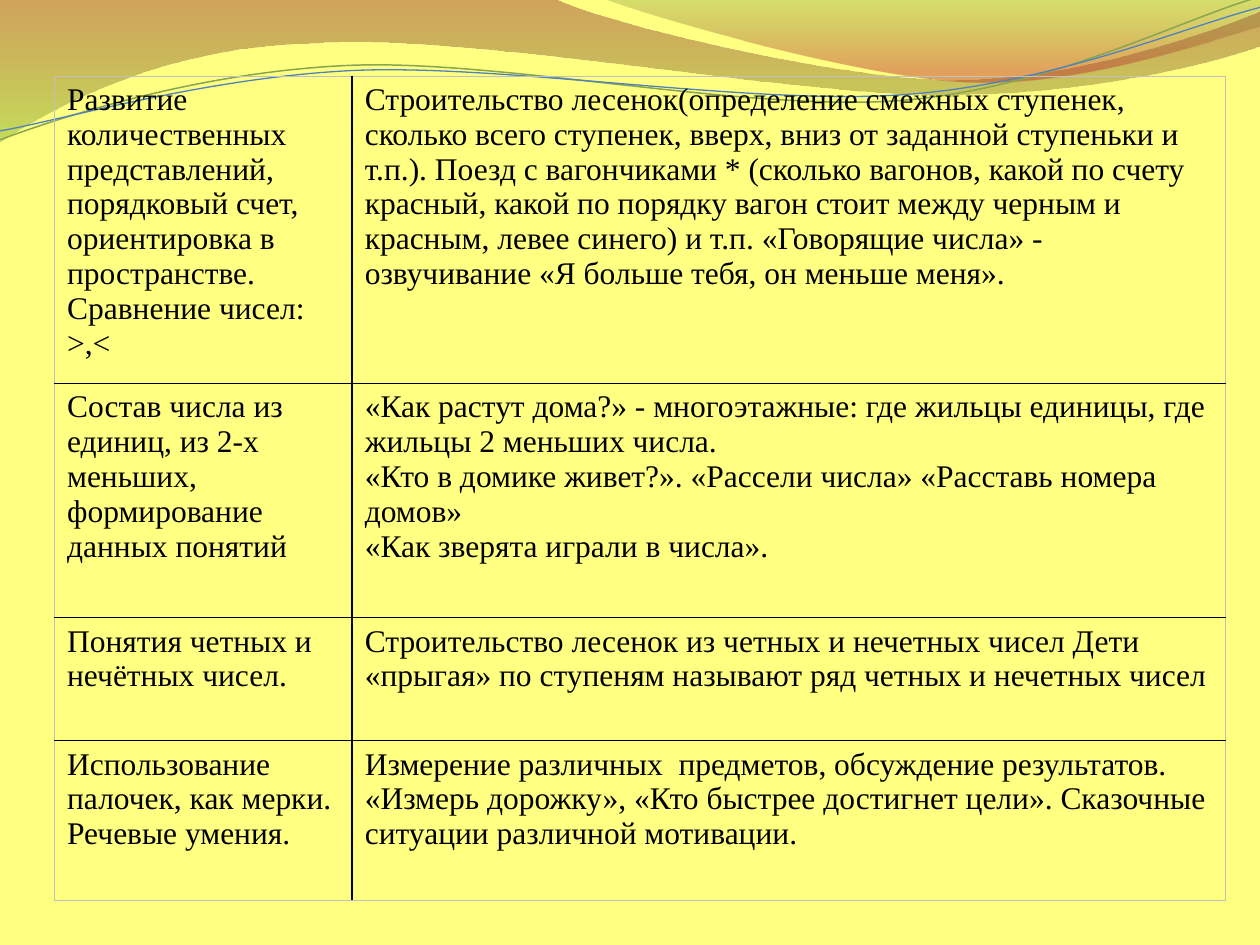
"""Build a slide with a table of number games under a wavy banner."""
import math
from dataclasses import dataclass

from lxml import etree
from pptx import Presentation
from pptx import util as u
from pptx.dml.color import RGBColor
from pptx.oxml import ns


@dataclass(frozen=True)
class Theme:
    """Colours, type and line sizes of the slide."""
    background: str = "FFFF82"
    ink: str = "000000"
    frame: str = "C0C0C0"
    brown: str = "973330"
    lime: str = "95C238"
    olive: str = "769537"
    red: str = "BE3330"
    green: str = "89A54F"
    blue: str = "4F81BD"
    font: str = "Times New Roman"
    size: float = 18
    rule: float = 1
    hairline: float = 0.5


THEME = Theme()
WAVE_ROTATION = -2.7

BAND_BOX = (-0.03, -0.03, 25.46, 2.9)
BAND = [(0, 0), (11.18, -0.03),
        (12.09, 0.43, 16.87, 1.6, 19.25, 1.6),
        (21.67, 1.6, 24.33, 0.66, 25.4, 0.23),
        (25.43, 0.91),
        (24.97, 1.12, 22.1, 1.93, 18.95, 1.91),
        (15.8, 1.91, 9.7, 0.71, 6.53, 0.86),
        (3.28, 0.91, 1.17, 2.11, -0.03, 2.87), (0, 0)]
CREST_BOX = (12.17, -0.03, 13.23, 1.78)
CREST = [(12.17, -0.03),
         (12.93, 0.28, 17.32, 1.57, 19.53, 1.65),
         (21.74, 1.75, 24.41, 0.81, 25.4, 0.53),
         (25.4, 0), (12.17, -0.03)]
GREEN_BOX = (-0.05, 0.56, 25.45, 1.8)
GREEN_WAVE = [(0, 2.82),
              (1.22, 2.36, 4.01, 1.45, 7.04, 1.32),
              (10.03, 1.19, 15.06, 2.26, 18.11, 2.03),
              (21.16, 1.8, 23.83, 0.38, 25.35, -0.05)]
BLUE_BOX = (-0.05, 0.76, 25.48, 1.47)
BLUE_WAVE = [(0, 2.64),
             (1.19, 2.44, 4.17, 1.55, 7.19, 1.42),
             (10.24, 1.3, 15.16, 2.13, 18.21, 1.91),
             (21.23, 1.7, 23.9, 0.53, 25.4, 0.15)]

COLUMN_WIDTHS = [6, 17.6]
ROW_HEIGHTS = [6.2, 4.72, 2.48, 3.22]
ROWS = [
    ("Развитие количественных представлений, порядковый счет, ориентировка в "
     "пространстве. Сравнение чисел: >,<",
     "Строительство лесенок(определение смежных ступенек, сколько всего ступенек, "
     "вверх, вниз от заданной ступеньки и т.п.). Поезд с вагончиками * (сколько "
     "вагонов, какой по счету красный, какой по порядку вагон стоит между черным и "
     "красным, левее синего) и т.п. «Говорящие числа» - озвучивание «Я больше тебя, "
     "он меньше меня»."),
    ("Состав числа из единиц, из 2-х меньших, формирование данных понятий",
     "«Как растут дома?» - многоэтажные: где жильцы единицы, где жильцы 2 меньших "
     "числа.\n«Кто в домике живет?». «Рассели числа» «Расставь номера домов»\n"
     "«Как зверята играли в числа»."),
    ("Понятия четных и нечётных чисел.",
     "Строительство лесенок из четных и нечетных чисел Дети «прыгая» по ступеням "
     "называют ряд четных и нечетных чисел"),
    ("Использование палочек, как мерки. Речевые умения.",
     "Измерение различных  предметов, обсуждение результатов.\n«Измерь дорожку», "
     "«Кто быстрее достигнет цели». Сказочные ситуации различной мотивации."),
]


def color(value):
    """Return the colour object for a hex value."""
    return RGBColor.from_string(value)


def to_local(x, y, box, rotation):
    """Return a slide point as a point inside a rotated box."""
    left, top, width, height = box
    angle = math.radians(-rotation)
    dx, dy = x - left - width / 2, y - top - height / 2
    return (u.Cm(width / 2 + dx * math.cos(angle) - dy * math.sin(angle)),
            u.Cm(height / 2 + dx * math.sin(angle) + dy * math.cos(angle)))


def add_outline(slide, box, outline, rotation=0, close=False):
    """Add a freeform of straight and cubic segments without a shadow."""
    left, top, width, height = box
    right, bottom = left + width, top + height
    builder = slide.shapes.build_freeform(u.Cm(left), u.Cm(top))
    builder.add_line_segments([(u.Cm(x), u.Cm(y)) for x, y in
                               ((right, top), (right, bottom), (left, bottom))], close=False)
    shape = builder.convert_to_shape()
    shape.shadow.inherit = False
    shape.rotation = rotation
    contour = next(shape.element.iter(ns.qn("a:path")))
    for child in list(contour):
        contour.remove(child)
    for index, segment in enumerate(outline):
        tag = "cubicBezTo" if len(segment) == 6 else "lnTo" if index else "moveTo"
        command = etree.SubElement(contour, ns.qn(f"a:{tag}"))
        for x, y in zip(segment[::2], segment[1::2]):
            local_x, local_y = to_local(x, y, box, rotation)
            etree.SubElement(command, ns.qn("a:pt"), x=str(int(local_x)), y=str(int(local_y)))
    if close:
        etree.SubElement(contour, ns.qn("a:close"))
    return shape


def add_gradient_area(slide, box, outline, stops):
    """Add a closed area with a translucent gradient from top to bottom."""
    shape = add_outline(slide, box, outline, close=True)
    shape.line.fill.background()
    shape.fill.gradient()
    shape.fill.gradient_angle = 270
    for stop, (position, value, _) in zip(shape.fill.gradient_stops, stops):
        stop.position = position
        stop.color.rgb = color(value)
    for element, (_, _, opacity) in zip(shape.element.iter(ns.qn("a:srgbClr")), stops):
        etree.SubElement(element, ns.qn("a:alpha"), val=str(opacity * 1000))


def add_wave(slide, box, outline, value, width):
    """Add an open curved line."""
    shape = add_outline(slide, box, outline, WAVE_ROTATION)
    shape.fill.background()
    shape.line.color.rgb = color(value)
    shape.line.width = u.Pt(width)


def set_border(cell, side, value, width):
    """Draw one border of a cell."""
    properties = cell._tc.get_or_add_tcPr()
    line = etree.SubElement(properties, ns.qn(f"a:ln{side}"), w=str(int(u.Pt(width))))
    fill = etree.SubElement(line, ns.qn("a:solidFill"))
    etree.SubElement(fill, ns.qn("a:srgbClr"), val=value)


def fill_cell(cell, content, outer_sides):
    """Write a cell, with pale lines on its outer sides and dark ones inside."""
    for side in "LRTB":
        if side in outer_sides:
            set_border(cell, side, THEME.frame, THEME.rule if side == "B" else THEME.hairline)
        else:
            set_border(cell, side, THEME.ink, THEME.rule)
    cell.fill.background()
    cell.text_frame.text = content
    for paragraph in cell.text_frame.paragraphs:
        for run in paragraph.runs:
            run.font.name = THEME.font
            run.font.size = u.Pt(THEME.size)
            run.font.color.rgb = color(THEME.ink)


def add_games_table(slide):
    """Add the table of topics and games."""
    frame = slide.shapes.add_table(
        len(ROWS), len(COLUMN_WIDTHS), u.Cm(1.1), u.Cm(1.53),
        u.Cm(sum(COLUMN_WIDTHS)), u.Cm(sum(ROW_HEIGHTS)))
    table = frame.table
    table.first_row = table.horz_banding = False
    for column, width in zip(table.columns, COLUMN_WIDTHS):
        column.width = u.Cm(width)
    for index, (row, height) in enumerate(zip(table.rows, ROW_HEIGHTS)):
        row.height = u.Cm(height)
        edges = {0: "T", len(ROWS) - 1: "B"}.get(index, "")
        for cell, content, side in zip(row.cells, ROWS[index], "LR"):
            fill_cell(cell, content, edges + side)
    frame.height = u.Cm(17.02)


def main():
    """Build and save the presentation."""
    presentation = Presentation()
    presentation.slide_width, presentation.slide_height = u.Cm(25.4), u.Cm(19.05)
    slide = presentation.slides.add_slide(presentation.slide_layouts[6])
    slide.background.fill.solid()
    slide.background.fill.fore_color.rgb = color(THEME.background)
    add_gradient_area(slide, BAND_BOX, BAND, [(0, THEME.brown, 45), (1, THEME.lime, 55)])
    add_gradient_area(slide, CREST_BOX, CREST, [(0, THEME.olive, 30), (0.8, THEME.red, 45)])
    add_wave(slide, GREEN_BOX, GREEN_WAVE, THEME.green, 0.85)
    add_wave(slide, BLUE_BOX, BLUE_WAVE, THEME.blue, 0.75)
    add_games_table(slide)
    presentation.save("out.pptx")


if __name__ == "__main__":
    main()
